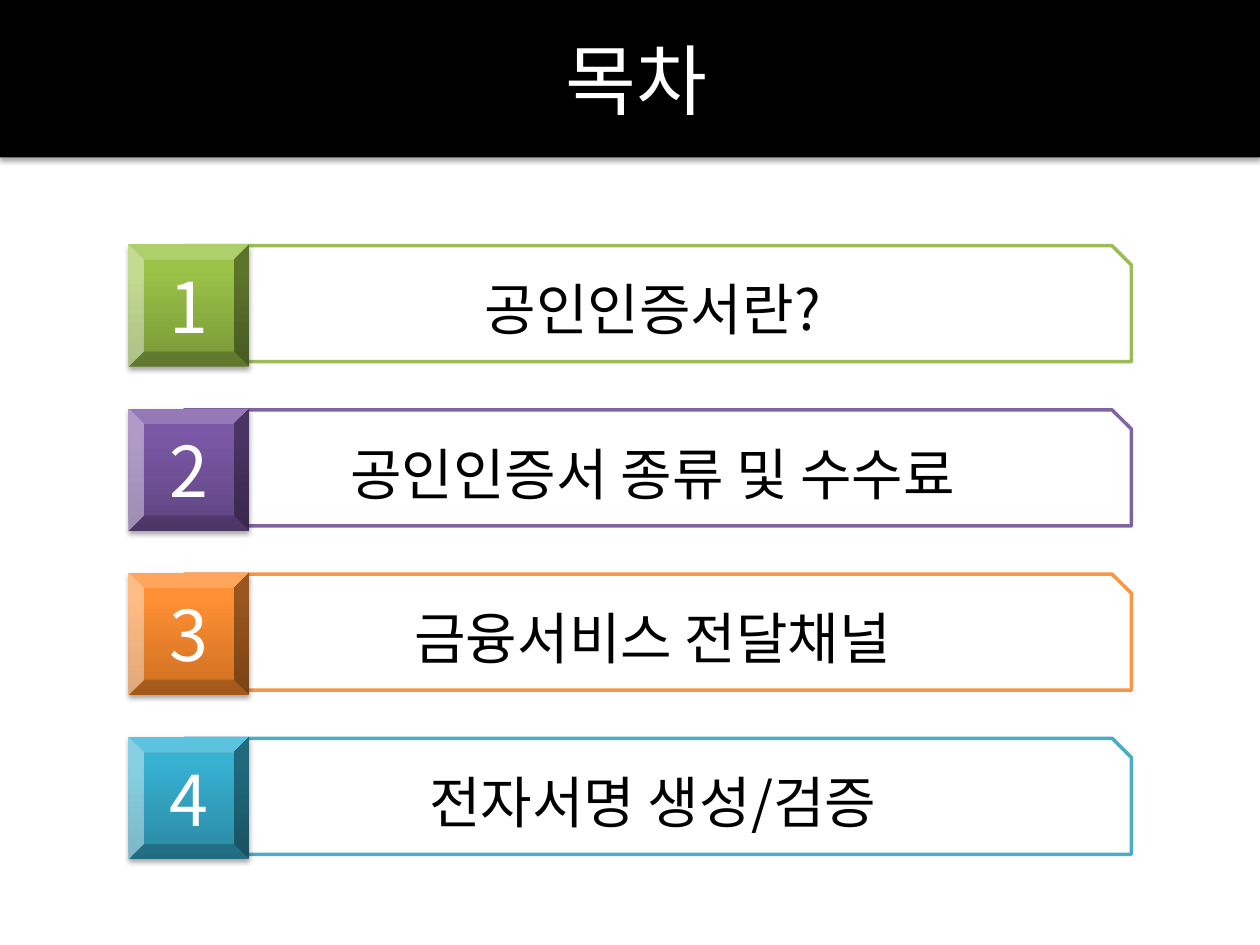
import copy

import pptx
import pptx.dml.color
import pptx.enum.shapes
import pptx.enum.text
import pptx.oxml
import pptx.oxml.ns
import pptx.util
from pptx.util import Inches

RGBColor = pptx.dml.color.RGBColor
SHAPE = pptx.enum.shapes.MSO_SHAPE

FONT = "Noto Sans CJK KR"
BLACK = RGBColor(0x00, 0x00, 0x00)
WHITE = RGBColor(0xFF, 0xFF, 0xFF)
GREEN = RGBColor(0x9B, 0xBB, 0x59)
PURPLE = RGBColor(0x80, 0x64, 0xA2)
ORANGE = RGBColor(0xF7, 0x96, 0x46)
TEAL = RGBColor(0x4B, 0xAC, 0xC6)
GREEN_BEVEL = (RGBColor(0x77, 0x97, 0x37), RGBColor(0x9B, 0xC3, 0x48), RGBColor(0x9D, 0xC7, 0x46))
PURPLE_BEVEL = (RGBColor(0x5F, 0x44, 0x80), RGBColor(0x7B, 0x58, 0xA6), RGBColor(0x7C, 0x57, 0xA8))
ORANGE_BEVEL = (RGBColor(0xCC, 0x6E, 0x20), RGBColor(0xFF, 0x90, 0x34), RGBColor(0xFF, 0x91, 0x36))
TEAL_BEVEL = (RGBColor(0x2A, 0x88, 0xA2), RGBColor(0x37, 0xB1, 0xD2), RGBColor(0x34, 0xB4, 0xD6))

ITEMS = (
    ("공인인증서란?", GREEN, GREEN_BEVEL),
    ("공인인증서 종류 및 수수료", PURPLE, PURPLE_BEVEL),
    ("금융서비스 전달채널", ORANGE, ORANGE_BEVEL),
    ("전자서명 생성/검증", TEAL, TEAL_BEVEL),
)
STOPS = (0, 0.8, 1)
FIRST_TOP, LAST_TOP = 1.94, 5.85


def set_text(shape, text, size, color):
    """Write one centred line of text into a shape."""
    tf = shape.text_frame
    tf.text = text
    tf.word_wrap = True
    tf.vertical_anchor = pptx.enum.text.MSO_ANCHOR.MIDDLE
    p = tf.paragraphs[0]
    p.alignment = pptx.enum.text.PP_ALIGN.CENTER
    r = p.runs[0]
    r.font.size = pptx.util.Pt(size)
    r.font.name = FONT
    r.font.color.rgb = color
    ea = pptx.oxml.parse_xml(f'<a:ea {pptx.oxml.ns.nsdecls("a")} typeface="{FONT}"/>')
    r.font.fill  # ensures the run properties exist
    r._r.get_or_add_rPr().find(pptx.oxml.ns.qn("a:latin")).addnext(ea)


def add_shadow(shape):
    """Give a shape a soft shadow falling straight down."""
    shape.shadow.inherit = False
    effects = shape._element.spPr.find(pptx.oxml.ns.qn("a:effectLst"))
    effects.append(pptx.oxml.parse_xml(
        f'<a:outerShdw {pptx.oxml.ns.nsdecls("a")} blurRad="{pptx.util.Pt(3.1)}" '
        f'dist="{pptx.util.Pt(1.8)}" dir="5400000" rotWithShape="0">'
        '<a:srgbClr val="000000"><a:alpha val="35000"/></a:srgbClr></a:outerShdw>'))


def fill_gradient(shape, colors):
    """Fill a shape with a three-stop gradient running upwards."""
    shape.fill.gradient()
    shape.fill.gradient_angle = 90
    stops = shape._element.spPr.find(".//" + pptx.oxml.ns.qn("a:gsLst"))
    stops.append(copy.deepcopy(stops[0]))
    for stop, position, color in zip(shape.fill.gradient_stops, STOPS, colors):
        stop.position = position
        stop.color.rgb = color


def add_header(s, left, top, width, height):
    """Draw the title band and its title."""
    band = s.shapes.add_shape(SHAPE.RECTANGLE, left, top, width, height)
    band.fill.solid()
    band.fill.fore_color.rgb = BLACK
    band.line.fill.background()
    add_shadow(band)
    title = s.shapes.add_textbox(left + Inches(0.55), top, Inches(9), height)
    set_text(title, "목차", 44, WHITE)


def add_item(s, left, top, width, number, text, color, bevel_colors):
    """Draw one contents row: a framed label behind a numbered bevel."""
    inset = Inches(0.44)
    label = s.shapes.add_shape(SHAPE.SNIP_1_RECTANGLE, left + inset, top + Inches(0.01),
                               width - inset, Inches(0.92))
    label.shadow.inherit = False
    label.fill.solid()
    label.fill.fore_color.rgb = WHITE
    label.line.color.rgb = color
    label.line.width = pptx.util.Pt(2)
    set_text(label, text, 32, BLACK)

    bevel = s.shapes.add_shape(SHAPE.BEVEL, left, top, Inches(0.96), Inches(0.97))
    fill_gradient(bevel, bevel_colors)
    bevel.line.fill.background()
    add_shadow(bevel)
    set_text(bevel, str(number), 40, WHITE)


def main():
    """Build the contents slide."""
    prs = pptx.Presentation()
    prs.slide_width, prs.slide_height = Inches(10), Inches(7.5)
    s = prs.slides.add_slide(prs.slide_layouts[6])
    add_header(s, 0, 0, prs.slide_width, Inches(1.25))
    pitch = (LAST_TOP - FIRST_TOP) / (len(ITEMS) - 1)
    for i, item in enumerate(ITEMS):
        add_item(s, Inches(1.02), Inches(FIRST_TOP + i * pitch), Inches(7.96), i + 1, *item)
    prs.save("out.pptx")


if __name__ == "__main__":
    main()
